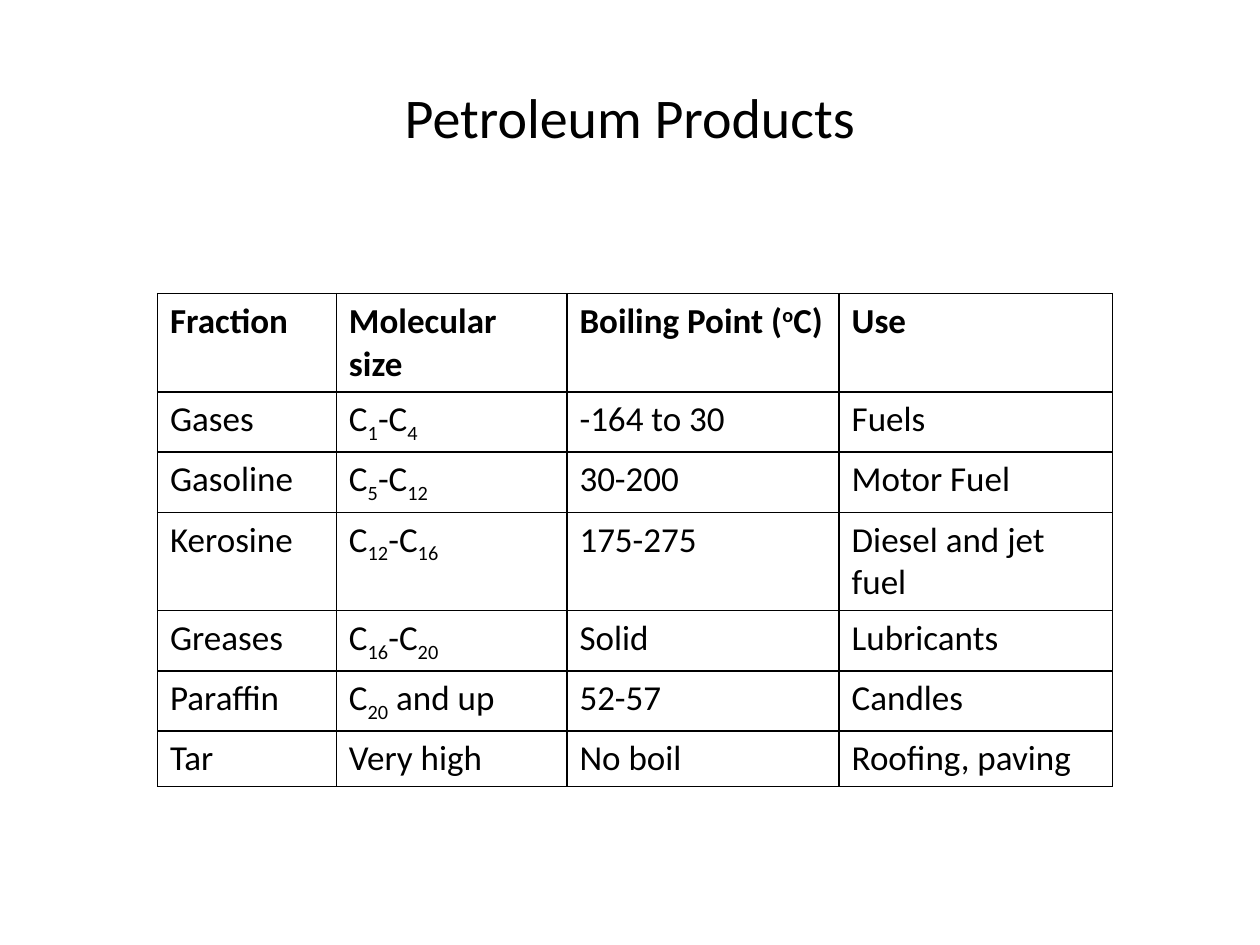
from lxml.etree import SubElement
from pptx import Presentation
from pptx.dml.color import RGBColor
from pptx.enum.text import MSO_ANCHOR, PP_ALIGN
from pptx.oxml.ns import qn
from pptx.util import Inches, Pt

FONT = "Calibri"
BLACK, WHITE = "000000", "FFFFFF"
SUB, SUPER = -25, 30
COLUMNS = [1.42, 1.83, 2.16, 2.17]
ROW_HEIGHT = 0.41


def carbon(n):
    return [("C", 0), (str(n), SUB)]


def carbon_range(low, high):
    return carbon(low) + [("-", 0)] + carbon(high)


ROWS = [
    ["Fraction", "Molecular size",
     [("Boiling Point (", 0), ("o", SUPER), ("C)", 0)], "Use"],
    ["Gases", carbon_range(1, 4), "-164 to 30", "Fuels"],
    ["Gasoline", carbon_range(5, 12), "30-200", "Motor Fuel"],
    ["Kerosine", carbon_range(12, 16), "175-275", "Diesel and jet fuel"],
    ["Greases", carbon_range(16, 20), "Solid", "Lubricants"],
    ["Paraffin", carbon(20) + [(" and up", 0)], "52-57", "Candles"],
    ["Tar", "Very high", "No boil", "Roofing, paving"],
]


def rgb(color):
    return RGBColor.from_string(color)


def add_run(p, text, size, bold=False, baseline=0):
    r = p.add_run()
    r.text = text
    r.font.name = FONT
    r.font.size = Pt(size)
    r.font.bold = bold
    r.font.color.rgb = rgb(BLACK)
    if baseline:
        r._r.get_or_add_rPr().set("baseline", str(baseline * 1000))


def add_borders(cell, color, width):
    tcPr = cell._tc.get_or_add_tcPr()
    for side in ("lnL", "lnR", "lnT", "lnB"):
        ln = SubElement(tcPr, qn(f"a:{side}"), w=str(Pt(width)))
        fill = SubElement(ln, qn("a:solidFill"))
        SubElement(fill, qn("a:srgbClr"), val=color)


def fill_cell(cell, content, bold):
    add_borders(cell, BLACK, 1)
    cell.fill.solid()
    cell.fill.fore_color.rgb = rgb(WHITE)
    runs = [(content, 0)] if isinstance(content, str) else content
    for text, baseline in runs:
        add_run(cell.text_frame.paragraphs[0], text, 20, bold, baseline)


def add_title(slide, text):
    sp = slide.shapes.title
    sp.left, sp.top = Inches(0.5), Inches(0.3)
    sp.width, sp.height = Inches(9), Inches(1.25)
    tf = sp.text_frame
    tf.vertical_anchor = MSO_ANCHOR.MIDDLE
    p = tf.paragraphs[0]
    p.alignment = PP_ALIGN.CENTER
    add_run(p, text, 32)


def add_product_table(slide, rows):
    table = slide.shapes.add_table(
        len(rows), len(COLUMNS), Inches(1.25), Inches(2.33),
        Inches(sum(COLUMNS)), Inches(ROW_HEIGHT * len(rows))).table
    table.horz_banding = False
    table.first_row = False
    for column, width in zip(table.columns, COLUMNS):
        column.width = Inches(width)
    for i, row in enumerate(rows):
        table.rows[i].height = Inches(ROW_HEIGHT)
        for j, content in enumerate(row):
            fill_cell(table.cell(i, j), content, bold=i == 0)


def main():
    prs = Presentation()
    prs.slide_width, prs.slide_height = Inches(10), Inches(7.5)
    slide = prs.slides.add_slide(prs.slide_layouts[5])
    add_title(slide, "Petroleum Products")
    add_product_table(slide, ROWS)
    prs.save("out.pptx")


if __name__ == "__main__":
    main()
